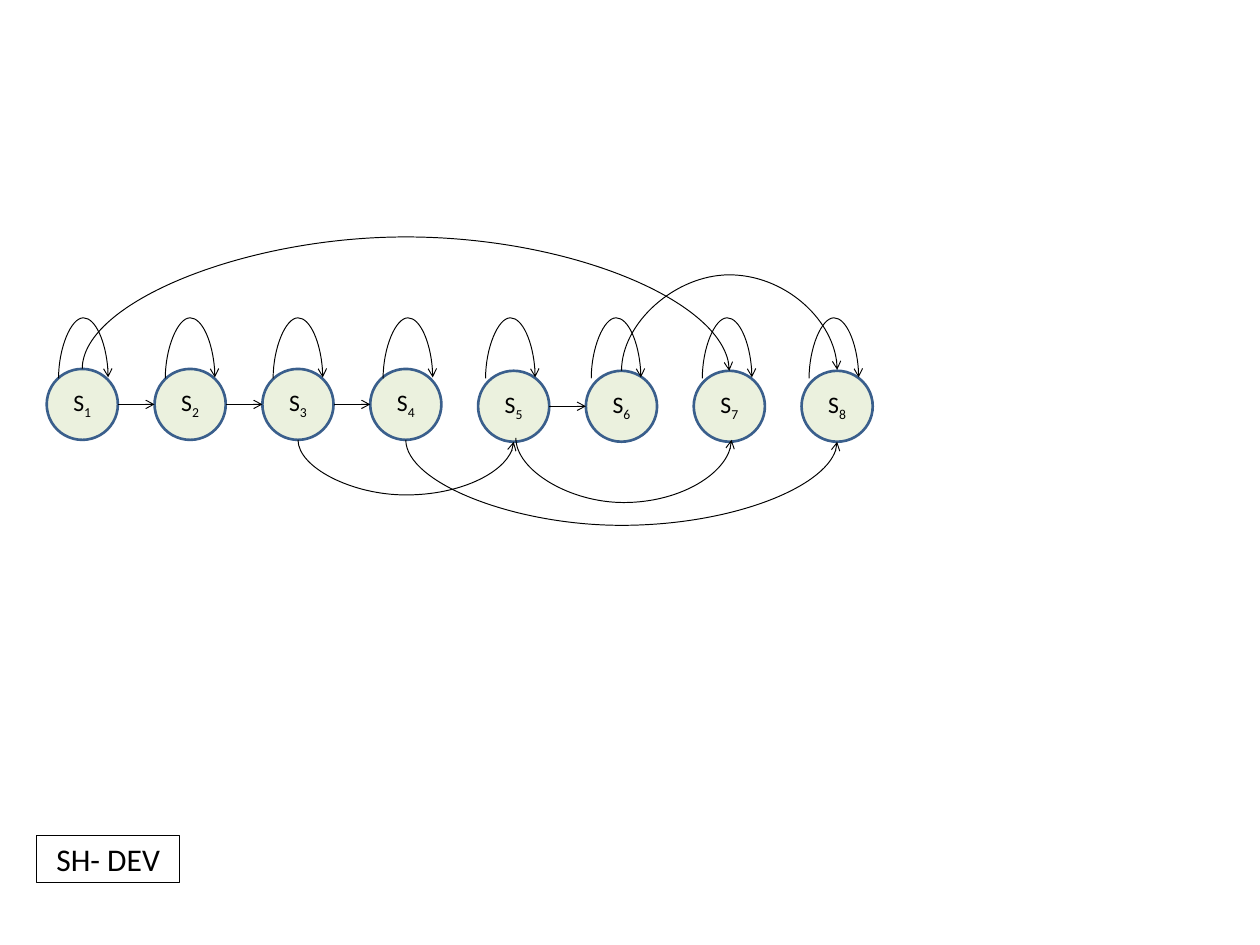
from lxml.etree import SubElement
from pptx import Presentation
from pptx.dml.color import RGBColor
from pptx.enum.shapes import MSO_CONNECTOR, MSO_SHAPE
from pptx.enum.text import MSO_ANCHOR, PP_ALIGN
from pptx.oxml.ns import qn
from pptx.util import Inches, Pt

BLACK = RGBColor(0x00, 0x00, 0x00)
STATE_FILL = RGBColor(0xEB, 0xF1, 0xDE)
STATE_EDGE = RGBColor(0x3A, 0x5F, 0x8C)

STATE_FONT = {"name": "Calibri", "size": Pt(18)}
CAPTION_FONT = {"name": "Calibri", "size": Pt(24)}

STATE_TOPS = [7.8] * 4 + [7.84] * 4
LOOP_SHIFTS = [0.01, 0, 0, 0.02, -0.03, -0.05, -0.02, -0.03]
STEPS = [0, 1, 2, 4]
JUMPS = [
    ((0, 7.8), (6, 7.84), 5.02),
    ((2, 9.3), (4, 9.34), 10.46),
    ((3, 9.3), (7, 9.34), 11.1),
    ((4.02, 9.26), (6.02, 9.3), 10.62),
    ((5, 7.84), (7, 7.82), 5.78),
]


class StateDiagram:
    """Draws states and transitions on a grid whose column 0 is the first state's centre."""

    origin, column, row = Inches(0.87), Inches(1.14), Inches(0.5)
    state_width, state_height = 0.66, 1.5

    def __init__(self, slide):
        self.shapes = slide.shapes

    def x(self, columns):
        return round(self.origin + columns * self.column)

    def y(self, rows):
        return round(rows * self.row)

    def box(self, column, row, width, height):
        return self.x(column), self.y(row), round(width * self.column), self.y(height)

    def outline(self, line, color, width):
        line.color.rgb = color
        line.width = Pt(width)

    def add_text(self, paragraph, text, font_format):
        paragraph.alignment = PP_ALIGN.CENTER
        run = paragraph.add_run()
        run.text = text
        for attribute, value in font_format.items():
            setattr(run.font, attribute, value)
        run.font.color.rgb = BLACK
        return run

    def state(self, column, top, number):
        left = column - self.state_width / 2
        circle = self.shapes.add_shape(
            MSO_SHAPE.OVAL, *self.box(left, top, self.state_width, self.state_height))
        circle.shadow.inherit = False
        circle.fill.solid()
        circle.fill.fore_color.rgb = STATE_FILL
        self.outline(circle.line, STATE_EDGE, 2)
        circle.text_frame.vertical_anchor = MSO_ANCHOR.MIDDLE
        symbol = circle.text_frame.paragraphs[0]
        self.add_text(symbol, "S", STATE_FONT)
        index = self.add_text(symbol, str(number), STATE_FONT)
        index.font._element.set("baseline", "-25000")

    def arrow(self, kind, x1, y1, x2, y2):
        transition = self.shapes.add_connector(kind, x1, y1, x2, y2)
        self.outline(transition.line, BLACK, 0.75)
        properties = transition._element.spPr
        SubElement(properties.find(qn("a:ln")), qn("a:tailEnd"), type="arrow")
        SubElement(properties, qn("a:effectLst"))
        return properties

    def step(self, column, row):
        edge = self.state_width / 2
        self.arrow(MSO_CONNECTOR.STRAIGHT, self.x(column + edge), self.y(row),
                   self.x(column + 1 - edge), self.y(row))

    def arc(self, start, end, bend):
        x1, x2 = self.x(start[0]), self.x(end[0])
        y1, y2 = self.y(start[1]), self.y(end[1])
        depth, span = abs(y2 - y1), x2 - x1
        left = (x1 + x2 - depth) // 2
        top = (y1 + y2 - span) // 2
        properties = self.arrow(MSO_CONNECTOR.CURVE, left, top, left + depth, top + span)
        turn = {"rot": "16200000", "flipH": "1"}
        if y2 < y1:
            turn = {"rot": "5400000", "flipH": "1", "flipV": "1"}
        for attribute, value in turn.items():
            properties.find(qn("a:xfrm")).set(attribute, value)
        share = round((self.y(bend) - y1) / (y2 - y1) * 100000)
        SubElement(properties.find(".//" + qn("a:avLst")), qn("a:gd"),
                   name="adj1", fmla=f"val {share}")

    def caption(self, text, column, row, width, height):
        label = self.shapes.add_textbox(*self.box(column, row, width, height))
        label.text_frame.word_wrap = True
        self.outline(label.line, BLACK, 0.75)
        self.add_text(label.text_frame.paragraphs[0], text, CAPTION_FONT)


def main():
    deck = Presentation()
    deck.slide_width, deck.slide_height = Inches(13.32), Inches(9.99)
    diagram = StateDiagram(deck.slides.add_slide(deck.slide_layouts[6]))
    for column, top in enumerate(STATE_TOPS):
        diagram.state(column, top, column + 1)
    for column in STEPS:
        diagram.step(column, STATE_TOPS[column] + diagram.state_height / 2)
    for column, shift in enumerate(LOOP_SHIFTS):
        middle = column + shift
        diagram.arc((middle - 0.23, 8), (middle + 0.23, 7.98), 6.7)
    for start, end, bend in JUMPS:
        diagram.arc(start, end, bend)
    diagram.caption("SH- DEV", -0.42, 17.66, 1.32, 1)
    deck.save("out.pptx")


if __name__ == "__main__":
    main()
